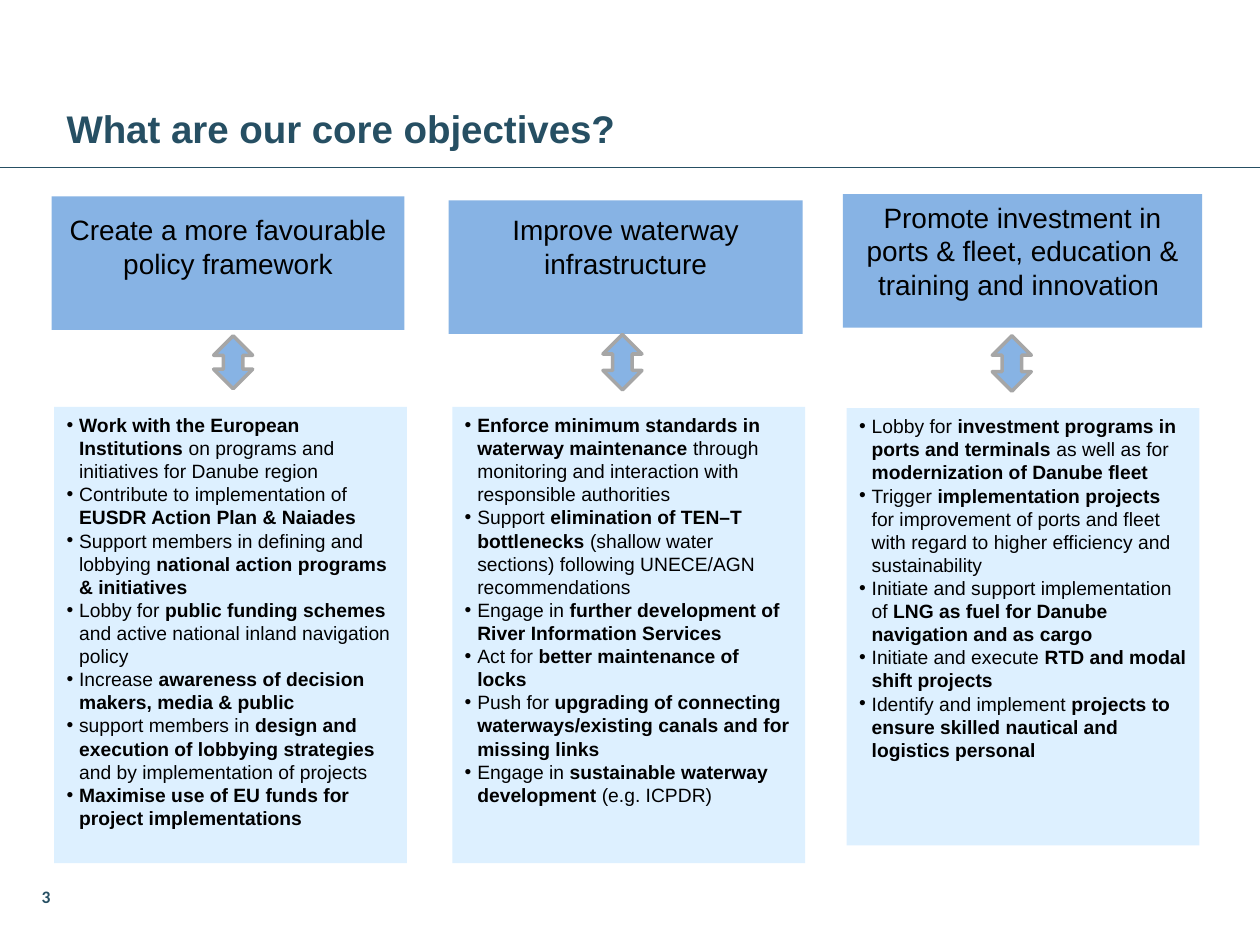
from lxml import etree
from pptx import Presentation
from pptx.dml.color import RGBColor
from pptx.enum.shapes import MSO_CONNECTOR as Connector, MSO_SHAPE as Shape
from pptx.enum.text import MSO_ANCHOR as Anchor, PP_ALIGN as Align
from pptx.oxml.ns import qn
from pptx.util import Inches, Pt

NAVY = RGBColor(0x26, 0x4F, 0x63)
BLUE = RGBColor(0x87, 0xB3, 0xE4)
PALE_BLUE = RGBColor(0xDD, 0xF0, 0xFF)
GRAY = RGBColor(0xA6, 0xA6, 0xA6)
BLACK = RGBColor(0, 0, 0)

# Each column: heading text, heading frame, heading top inset,
# arrow frame, body frame, bullets (** switches bold on and off).
COLUMNS = [
    ("Create a more favourable policy framework",
     (0.41, 1.56, 2.8, 1.06), 0.13, (1.64, 2.72, 0.42, 0.31), (0.43, 3.23, 2.8, 3.62), [
         "**Work with the European Institutions **on programs and initiatives for Danube region",
         "Contribute to implementation of **EUSDR Action Plan & Naiades",
         "Support members in defining and lobbying **national action programs & initiatives",
         "Lobby for **public funding schemes **and active national inland navigation policy",
         "Increase **awareness of decision makers, media & public",
         "support members in **design and execution of lobbying strategies "
         "**and by implementation of projects",
         "**Maximise use of EU funds for project implementations",
     ]),
    ("Improve waterway infrastructure",
     (3.56, 1.59, 2.81, 1.06), 0.1, (4.72, 2.72, 0.44, 0.31), (3.59, 3.23, 2.8, 3.62), [
         "**Enforce minimum standards in waterway maintenance "
         "**through monitoring and interaction with responsible authorities",
         "Support **elimination of TEN–T bottlenecks "
         "**(shallow water sections) following UNECE/AGN recommendations",
         "Engage in **further development of River Information Services",
         "Act for **better maintenance of locks",
         "Push for **upgrading of connecting waterways/existing canals and for missing links",
         "Engage in **sustainable waterway development **(e.g. ICPDR)",
     ]),
    ("Promote investment in ports & fleet, education & training and innovation ",
     (6.69, 1.54, 2.85, 1.06), 0.05, (7.81, 2.73, 0.44, 0.31), (6.72, 3.24, 2.8, 3.47), [
         "Lobby for **investment programs in ports and terminals "
         "**as well as for **modernization of Danube fleet",
         "Trigger **implementation projects **for improvement of ports and fleet "
         "with regard to higher efficiency and sustainability",
         "Initiate and support implementation of **LNG as fuel for Danube navigation and as cargo",
         "Initiate and execute **RTD and modal shift projects",
         "Identify and implement **projects to ensure skilled nautical and logistics personal",
     ]),
]

deck = Presentation()
deck.slide_width, deck.slide_height = Inches(10), Inches(7.5)
page = deck.slides.add_slide(deck.slide_layouts[6])


def add_filled(kind, frame, fill):
    """Add a shape without outline or shadow, its text starting at the top."""
    shape = page.shapes.add_shape(kind, *map(Inches, frame))
    shape.shadow.inherit = False
    shape.fill.solid()
    shape.fill.fore_color.rgb = fill
    shape.line.fill.background()
    shape.text_frame.word_wrap = True
    shape.text_frame.vertical_anchor = Anchor.TOP
    return shape


def style(font, size, color, bold=False, name="Arial"):
    font.name, font.size, font.bold = name, Pt(size), bold
    font.color.rgb = color


# Page number, rule and title
number = page.shapes.add_textbox(Inches(0), Inches(6.98), Inches(0.5), Inches(0.27))
number.text_frame.text = "3"
number.text_frame.paragraphs[0].alignment = Align.RIGHT
style(number.text_frame.paragraphs[0].runs[0].font, 10, NAVY, True, "Calibri")

rule = page.shapes.add_connector(Connector.STRAIGHT, Inches(0), Inches(1.33), Inches(10), Inches(1.33))
rule.line.color.rgb = NAVY
rule.line.width = Pt(1)
etree.SubElement(rule._element.spPr, qn("a:effectLst"))

title = page.shapes.add_textbox(Inches(0.43), Inches(0.75), Inches(9.07), Inches(0.58))
title.text_frame.word_wrap = True
title.text_frame.margin_top = Inches(0.08)
title.text_frame.text = "What are our core objectives?"
style(title.text_frame.paragraphs[0].runs[0].font, 22, NAVY, True)

# Three objectives
for heading_text, heading_frame, inset, arrow_frame, body_frame, bullets in COLUMNS:
    heading = add_filled(Shape.RECTANGLE, heading_frame, BLUE)
    heading.text_frame.margin_top = Inches(inset)
    heading.text_frame.text = heading_text
    para = heading.text_frame.paragraphs[0]
    para.alignment = Align.CENTER
    style(para.runs[0].font, 16, BLACK)

    arrow = add_filled(Shape.LEFT_RIGHT_ARROW, arrow_frame, BLUE)
    arrow.rotation = 90
    arrow.line.color.rgb = GRAY
    arrow.line.width = Pt(2)

    body = add_filled(Shape.RECTANGLE, body_frame, PALE_BLUE)
    for index, bullet in enumerate(bullets):
        para = body.text_frame.add_paragraph() if index else body.text_frame.paragraphs[0]
        para.alignment = Align.LEFT
        props = para._p.get_or_add_pPr()
        props.set("marL", str(Inches(0.1)))
        props.set("indent", str(-Inches(0.1)))
        etree.SubElement(props, qn("a:buFont"), typeface="Arial")
        etree.SubElement(props, qn("a:buChar"), char="•")
        for part, text in enumerate(bullet.split("**")):
            if text:
                span = para.add_run()
                span.text = text
                style(span.font, 11, BLACK, bold=part % 2 == 1)

deck.save("out.pptx")
